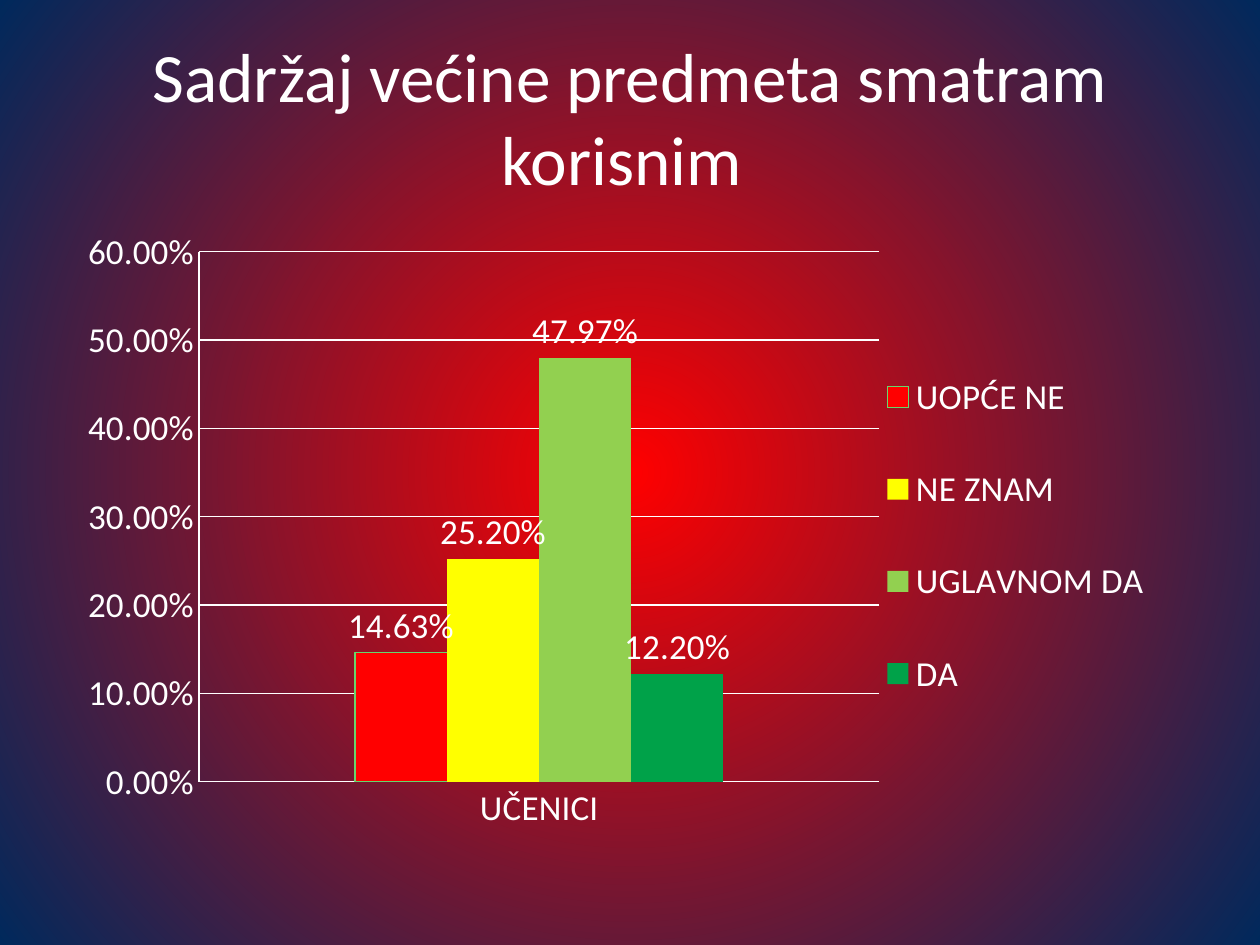
import dataclasses
import typing

import lxml.etree
import pptx
import pptx.chart.data
import pptx.dml.color
import pptx.enum.chart
import pptx.enum.text
import pptx.oxml
import pptx.oxml.ns
import pptx.util

Inches = pptx.util.Inches
Pt = pptx.util.Pt
qn = pptx.oxml.ns.qn
WHITE = "FFFFFF"
RATE = "0.00%"


@dataclasses.dataclass
class Answer:
    name: str
    share: float
    fill: str
    edge: typing.Optional[str] = None


ANSWERS = [
    Answer("UOPĆE NE", 0.1463, "FF0000", "68D66B"),
    Answer("NE ZNAM", 0.252, "FFFF00"),
    Answer("UGLAVNOM DA", 0.4797, "92D050"),
    Answer("DA", 0.122, "00A249"),
]


def shade(code: str) -> pptx.dml.color.RGBColor:
    return pptx.dml.color.RGBColor.from_string(code)


def apply(thing: typing.Any, look: dict) -> None:
    for key, value in look.items():
        setattr(thing, key, value)


def style(font: typing.Any, size: float) -> None:
    apply(font, {"name": "Calibri", "size": Pt(size), "bold": False})
    font.color.rgb = shade(WHITE)


def rule(line: typing.Any, code: str) -> None:
    line.color.rgb = shade(code)
    line.width = Pt(0.75)


def paint(slide: typing.Any) -> None:
    fill = slide.background.fill
    fill.gradient()
    for stop, spot, code in zip(fill.gradient_stops, (0, 1), ("FF0000", "00295C")):
        stop.position = spot
        stop.color.rgb = shade(code)
    grad = slide.element.find(".//" + qn("a:gradFill"))
    grad.remove(grad.find(qn("a:lin")))
    glow = lxml.etree.SubElement(grad, qn("a:path"), {"path": "circle"})
    sides = dict.fromkeys("ltrb", "50000")
    lxml.etree.SubElement(glow, qn("a:fillToRect"), sides)


def place(part: typing.Any, after: str, box: dict, inner: bool = False) -> None:
    for old in part.findall(qn("c:layout")):
        part.remove(old)
    frame = lxml.etree.Element(qn("c:layout"))
    hand = lxml.etree.SubElement(frame, qn("c:manualLayout"))
    rows = [("layoutTarget", "inner")] if inner else []
    rows += [("xMode", "edge"), ("yMode", "edge"), *box.items()]
    for tag, value in rows:
        lxml.etree.SubElement(hand, qn("c:" + tag), {"val": str(value)})
    if after:
        part.find(qn(after)).addnext(frame)
    else:
        part.insert(0, frame)


def add_title(slide: typing.Any) -> None:
    title = slide.shapes.title
    apply(title, {"left": Inches(0.5), "top": Inches(0.3),
                  "width": Inches(9), "height": Inches(1.25)})
    frame = title.text_frame
    frame.text = "Sadržaj većine predmeta smatram korisnim "
    apply(frame, {"word_wrap": True,
                  "auto_size": pptx.enum.text.MSO_AUTO_SIZE.NONE,
                  "vertical_anchor": pptx.enum.text.MSO_ANCHOR.MIDDLE})
    line = frame.paragraphs[0]
    line.alignment = pptx.enum.text.PP_ALIGN.CENTER
    style(line.runs[0].font, 39.6)


def add_bars(slide: typing.Any) -> None:
    data = pptx.chart.data.CategoryChartData(number_format=RATE)
    data.categories = ["UČENICI"]
    for answer in ANSWERS:
        data.add_series(answer.name, [answer.share])
    kinds = pptx.enum.chart
    chart = slide.shapes.add_chart(
        kinds.XL_CHART_TYPE.COLUMN_CLUSTERED,
        Inches(0.5), Inches(1.75), Inches(9), Inches(4.95), data).chart
    apply(chart, {"has_title": False, "has_legend": True})
    style(chart.font, 10)
    plot = chart.plots[0]
    apply(plot, {"gap_width": 339, "overlap": 0, "vary_by_categories": False})

    for bar, answer in zip(plot.series, ANSWERS):
        bar.format.fill.solid()
        bar.format.fill.fore_color.rgb = shade(answer.fill)
        if answer.edge:
            rule(bar.format.line, answer.edge)
        labels = bar.data_labels
        apply(labels, {"show_value": True, "number_format": RATE,
                       "number_format_is_linked": False,
                       "position": kinds.XL_LABEL_POSITION.OUTSIDE_END})
        style(labels.font, 20)

    for axis in (chart.category_axis, chart.value_axis):
        apply(axis, {"major_tick_mark": kinds.XL_TICK_MARK.NONE,
                     "minor_tick_mark": kinds.XL_TICK_MARK.NONE})
        style(axis.tick_labels.font, 20)
        rule(axis.format.line, WHITE)
    scale = chart.value_axis
    apply(scale, {"minimum_scale": 0, "maximum_scale": 0.6,
                  "major_unit": 0.1, "has_major_gridlines": True})
    apply(scale.tick_labels, {"number_format": RATE,
                              "number_format_is_linked": False})
    rule(scale.major_gridlines.format.line, WHITE)

    legend = chart.legend
    apply(legend, {"position": kinds.XL_LEGEND_POSITION.RIGHT,
                   "include_in_layout": False})
    style(legend.font, 20)
    space = chart.element.find(".//" + qn("c:plotArea"))
    place(space, "", {"x": 0.12, "y": 0.05, "w": 0.6, "h": 0.85}, True)
    key = chart.element.find(".//" + qn("c:legend"))
    place(key, "c:legendPos", {"x": 0.69, "y": 0.17, "w": 0.3, "h": 0.67})


def main() -> None:
    deck = pptx.Presentation()
    apply(deck, {"slide_width": Inches(10), "slide_height": Inches(7.5)})
    slide = deck.slides.add_slide(deck.slide_layouts[5])
    paint(slide)
    add_title(slide)
    add_bars(slide)
    deck.save("out.pptx")


if __name__ == "__main__":
    main()
